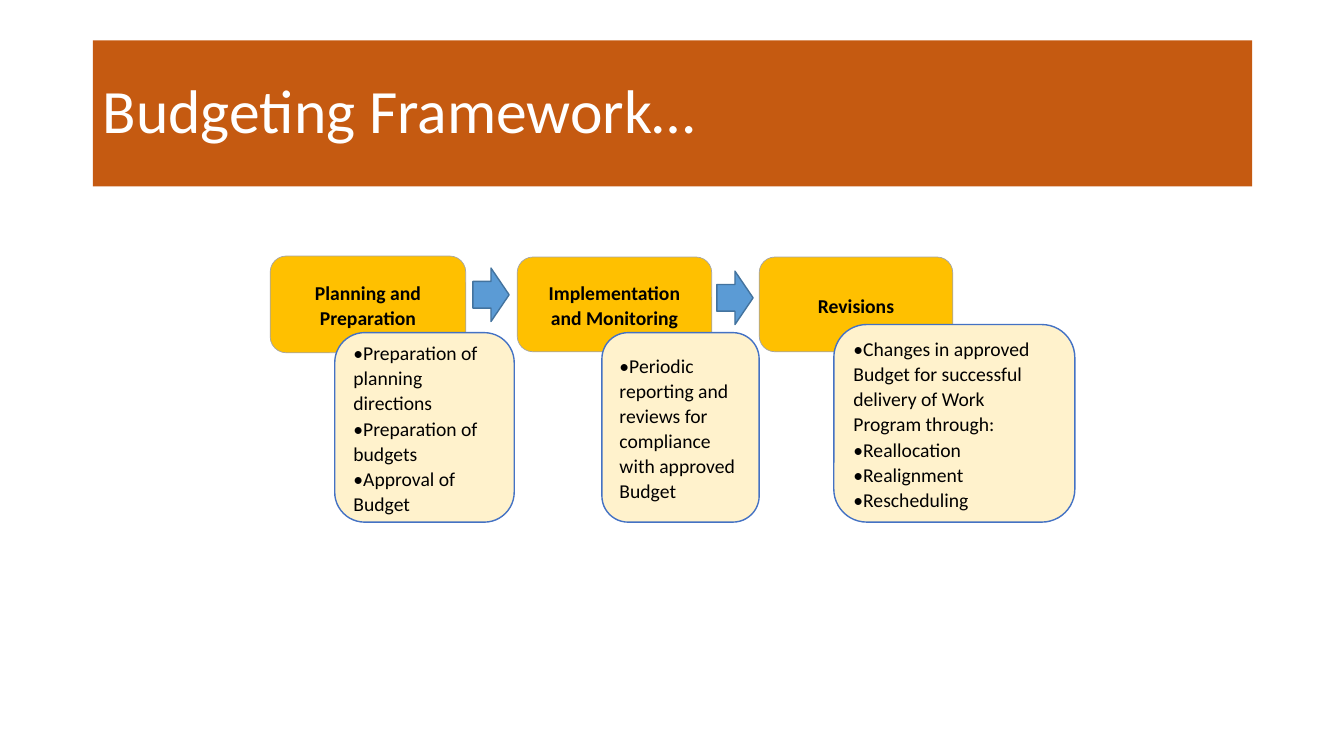
from pptx import Presentation
from pptx import util as u
from pptx.dml.color import RGBColor
from pptx.enum import shapes, text

ORANGE = RGBColor(0xC5, 0x5A, 0x11)
GOLD = RGBColor(0xFF, 0xC0, 0x00)
CREAM = RGBColor(0xFF, 0xF2, 0xCC)
GREY = RGBColor(0xA5, 0xA5, 0xA5)
BLUE = RGBColor(0x5B, 0x9B, 0xD5)
DARK_BLUE = RGBColor(0x43, 0x73, 0x9E)
EDGE_BLUE = RGBColor(0x44, 0x72, 0xC4)
BLACK = RGBColor(0, 0, 0)
WHITE = RGBColor(0xFF, 0xFF, 0xFF)

EMU_PER_PX = 9144  # 100 px to the inch
TITLE_ONLY = 5

# stage name, its box, its details, their box
STAGES = [
    ("Planning and Preparation", (268, 254, 194, 96),
     ["Preparation of planning directions", "Preparation of budgets",
      "Approval of Budget"], (332, 330, 178, 188)),
    ("Implementation and Monitoring", (513, 255, 193, 94),
     ["Periodic reporting and reviews for compliance with approved Budget"],
     (597, 330, 156, 188)),
    ("Revisions", (753, 255, 192, 94),
     ["Changes in approved Budget for successful delivery of Work Program through:",
      "Reallocation", "Realignment", "Rescheduling"], (827, 322, 239, 196)),
]
ARROWS = [(469, 266, 36, 53), (711, 269, 36, 53)]


class FrameworkSlide:
    font = "Calibri"

    def __init__(self, deck):
        self.slide = deck.slides.add_slide(deck.slide_layouts[TITLE_ONLY])

    def emu(self, box):
        return [px * EMU_PER_PX for px in box]

    def set_wording(self, shape, wording, size, color, align, spacing, bold=False):
        frame = shape.text_frame
        frame.text = wording
        frame.word_wrap = True
        frame.auto_size = text.MSO_AUTO_SIZE.NONE
        frame.vertical_anchor = text.MSO_ANCHOR.MIDDLE
        for paragraph in frame.paragraphs:
            paragraph.alignment = align
            paragraph.line_spacing = spacing
            paragraph.space_before = paragraph.space_after = u.Pt(0)
            for run in paragraph.runs:
                run.font.name = self.font
                run.font.size = u.Pt(size)
                run.font.bold = bold
                run.font.color.rgb = color

    def title(self, wording, box):
        banner = self.slide.shapes.title
        banner.left, banner.top, banner.width, banner.height = self.emu(box)
        banner.fill.solid()
        banner.fill.fore_color.rgb = ORANGE
        self.set_wording(banner, wording, 44, WHITE, text.PP_ALIGN.LEFT, 0.9)

    def preset(self, kind, box, fill, line, width):
        shape = self.slide.shapes.add_shape(kind, *self.emu(box))
        shape.shadow.inherit = False
        shape.fill.solid()
        shape.fill.fore_color.rgb = fill
        shape.line.color.rgb = line
        shape.line.width = u.Pt(width)
        return shape

    def stage(self, name, box):
        card = self.preset(shapes.MSO_SHAPE.ROUNDED_RECTANGLE, box, GOLD, GREY, 0.5)
        self.set_wording(card, name, 14, BLACK, text.PP_ALIGN.CENTER, 1.07, bold=True)

    def arrow(self, box):
        self.preset(shapes.MSO_SHAPE.RIGHT_ARROW, box, BLUE, DARK_BLUE, 1)

    def details(self, points, box):
        card = self.preset(shapes.MSO_SHAPE.ROUNDED_RECTANGLE, box, CREAM, EDGE_BLUE, 1)
        wording = "\n".join("•" + point for point in points)
        self.set_wording(card, wording, 14, BLACK, text.PP_ALIGN.LEFT, 1.07)


def main():
    deck = Presentation()
    deck.slide_width, deck.slide_height = u.Inches(13.33), u.Inches(7.5)
    framework = FrameworkSlide(deck)
    framework.title("Budgeting Framework…", (92, 40, 1150, 145))
    for name, box, _, _ in STAGES:
        framework.stage(name, box)
    for box in ARROWS:
        framework.arrow(box)
    for _, _, points, box in STAGES:
        framework.details(points, box)
    deck.save("out.pptx")


if __name__ == "__main__":
    main()
